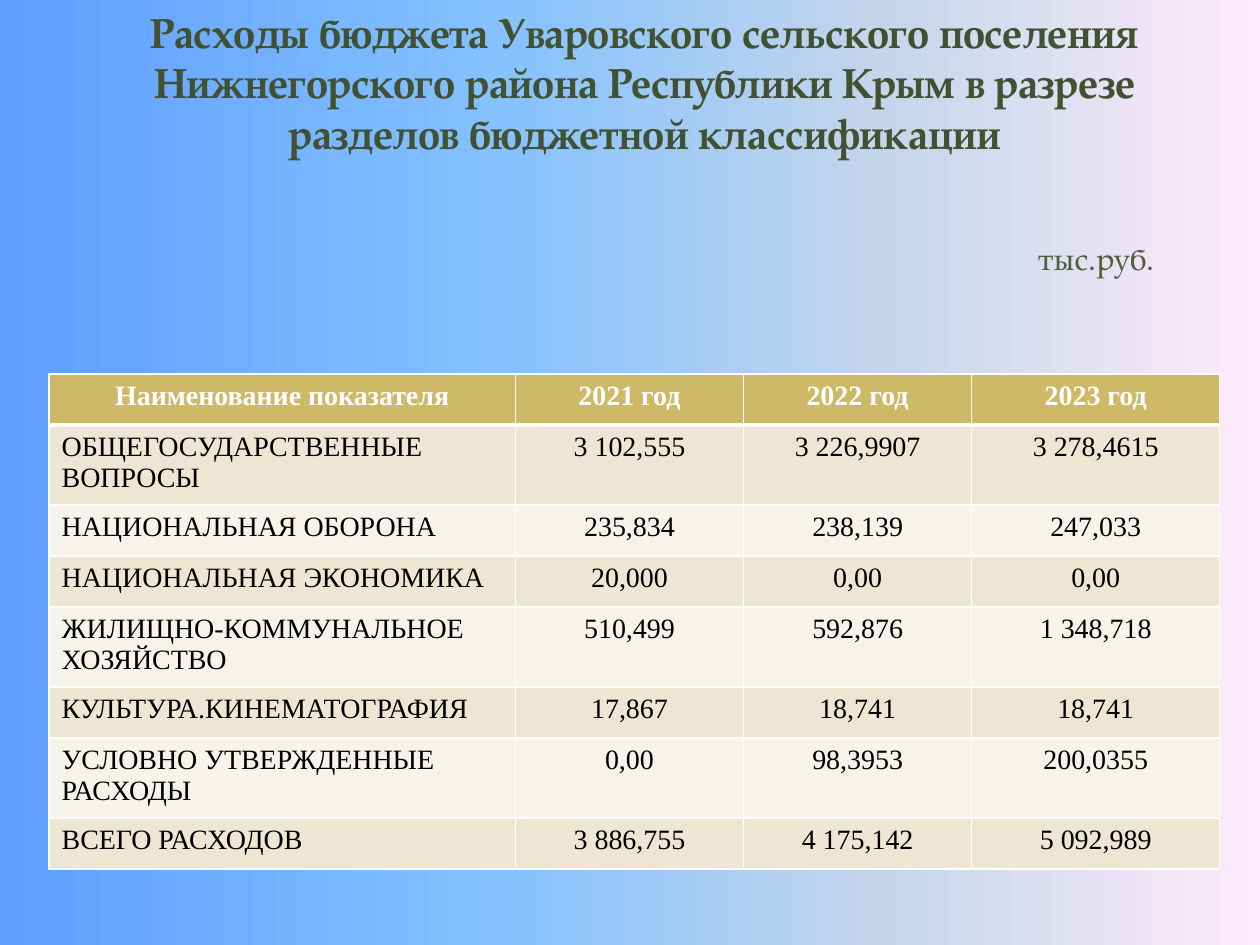
from dataclasses import dataclass

from lxml import etree
from pptx import Presentation
from pptx import util as u
from pptx.dml.color import RGBColor
from pptx.enum import text
from pptx.oxml import ns


@dataclass(frozen=True)
class Theme:
    display_font: str = "TeX Gyre Pagella"
    table_font: str = "Times New Roman"
    title_size: int = 24
    unit_size: int = 18
    table_size: int = 16
    title_color: str = "425131"
    unit_color: str = "4F5E3C"
    header_fill: str = "CEB966"
    band_fills: tuple = ("EDE6D3", "F6F3EA")
    white: str = "FFFFFF"
    black: str = "000000"
    background: tuple = ((0, "5E9EFF"), (40, "85C2FF"), (70, "C4D6EB"), (100, "FFEBFA"))


THEME = Theme()

TITLE = ("Расходы бюджета Уваровского сельского поселения Нижнегорского района "
         "Республики Крым в разрезе разделов бюджетной классификации")
UNIT = "тыс.руб."
EXPENSES = [
    ("Наименование показателя", "2021 год", "2022 год", "2023 год"),
    ("ОБЩЕГОСУДАРСТВЕННЫЕ ВОПРОСЫ", "3 102,555", "3 226,9907", "3 278,4615"),
    ("НАЦИОНАЛЬНАЯ ОБОРОНА", "235,834", "238,139", "247,033"),
    ("НАЦИОНАЛЬНАЯ ЭКОНОМИКА", "20,000", "0,00", "0,00"),
    ("ЖИЛИЩНО-КОММУНАЛЬНОЕ ХОЗЯЙСТВО", "510,499", "592,876", "1 348,718"),
    ("КУЛЬТУРА.КИНЕМАТОГРАФИЯ", "17,867", "18,741", "18,741"),
    ("УСЛОВНО УТВЕРЖДЕННЫЕ РАСХОДЫ", "0,00", "98,3953", "200,0355"),
    ("ВСЕГО РАСХОДОВ", "3 886,755", "4 175,142", "5 092,989"),
]
COLUMN_WIDTHS = (9.4, 4.6, 4.6, 5.0)
ROW_HEIGHT, TALL_ROW_HEIGHT = 1.03, 1.61
LONGEST_LINE = 25  # characters that fit in the first column


def format_text(frame, font, size, color, bold=False, align=text.PP_ALIGN.LEFT):
    for paragraph in frame.paragraphs:
        paragraph.alignment = align
        for run in paragraph.runs:
            run.font.name = font
            run.font.size = u.Pt(size)
            run.font.bold = bold
            run.font.color.rgb = RGBColor.from_string(color)


def paint_background(slide):
    fill = slide.background.fill
    fill.gradient()
    fill.gradient_angle = 0
    stops = slide.background._cSld.find(".//" + ns.qn("a:gsLst"))
    for stop in list(stops):
        stops.remove(stop)
    for position, color in THEME.background:
        stop = etree.SubElement(stops, ns.qn("a:gs"), pos=str(position * 1000))
        etree.SubElement(stop, ns.qn("a:srgbClr"), val=color)


def add_title(slide):
    title = slide.shapes.title
    title.left, title.top = u.Cm(1.1), u.Cm(0)
    title.width, title.height = u.Cm(23.8), u.Cm(3.32)
    frame = title.text_frame
    frame.text = TITLE
    frame.vertical_anchor = text.MSO_ANCHOR.TOP
    frame.auto_size = text.MSO_AUTO_SIZE.SHAPE_TO_FIT_TEXT
    format_text(frame, THEME.display_font, THEME.title_size, THEME.title_color,
                bold=True, align=text.PP_ALIGN.CENTER)


def add_unit_label(slide):
    label = slide.shapes.add_textbox(u.Cm(20.68), u.Cm(4.7), u.Cm(2.9), u.Cm(1.02))
    frame = label.text_frame
    frame.text = UNIT
    frame.word_wrap = False
    frame.auto_size = text.MSO_AUTO_SIZE.SHAPE_TO_FIT_TEXT
    format_text(frame, THEME.display_font, THEME.unit_size, THEME.unit_color)


def set_borders(cell, top=1, bottom=1):
    properties = cell._tc.get_or_add_tcPr()
    widths = {"lnL": 1, "lnR": 1, "lnT": top, "lnB": bottom}
    # Border lines come before the fill in the cell properties
    for place, (side, width) in enumerate(widths.items()):
        line = etree.Element(ns.qn("a:" + side), w=str(u.Pt(width)))
        solid = etree.SubElement(line, ns.qn("a:solidFill"))
        etree.SubElement(solid, ns.qn("a:srgbClr"), val=THEME.white)
        properties.insert(place, line)


def fill_cell(cell, value, row, column):
    header = row == 0
    fill = THEME.header_fill if header else THEME.band_fills[(row - 1) % 2]
    cell.text_frame.text = value
    cell.fill.solid()
    cell.fill.fore_color.rgb = RGBColor.from_string(fill)
    centered = header or column > 0
    format_text(cell.text_frame, THEME.table_font, THEME.table_size,
                THEME.white if header else THEME.black, bold=header,
                align=text.PP_ALIGN.CENTER if centered else text.PP_ALIGN.LEFT)
    set_borders(cell, top=3 if row == 1 else 1, bottom=3 if header else 1)


def add_expense_table(slide):
    heights = [TALL_ROW_HEIGHT if len(name) > LONGEST_LINE else ROW_HEIGHT
               for name, *_ in EXPENSES]
    table = slide.shapes.add_table(
        len(EXPENSES), len(COLUMN_WIDTHS), u.Cm(0.99), u.Cm(7.54),
        u.Cm(sum(COLUMN_WIDTHS)), u.Cm(sum(heights))).table
    for column, width in zip(table.columns, COLUMN_WIDTHS):
        column.width = u.Cm(width)
    for row, height in zip(table.rows, heights):
        row.height = u.Cm(height)
    for r, values in enumerate(EXPENSES):
        for c, value in enumerate(values):
            fill_cell(table.cell(r, c), value, r, c)


def main():
    deck = Presentation()
    deck.slide_width, deck.slide_height = u.Cm(25.4), u.Cm(19.05)
    slide = deck.slides.add_slide(deck.slide_layouts[5])

    # Backdrop and heading
    paint_background(slide)
    add_title(slide)

    # Budget figures and their unit
    add_expense_table(slide)
    add_unit_label(slide)

    deck.save("out.pptx")


if __name__ == "__main__":
    main()
